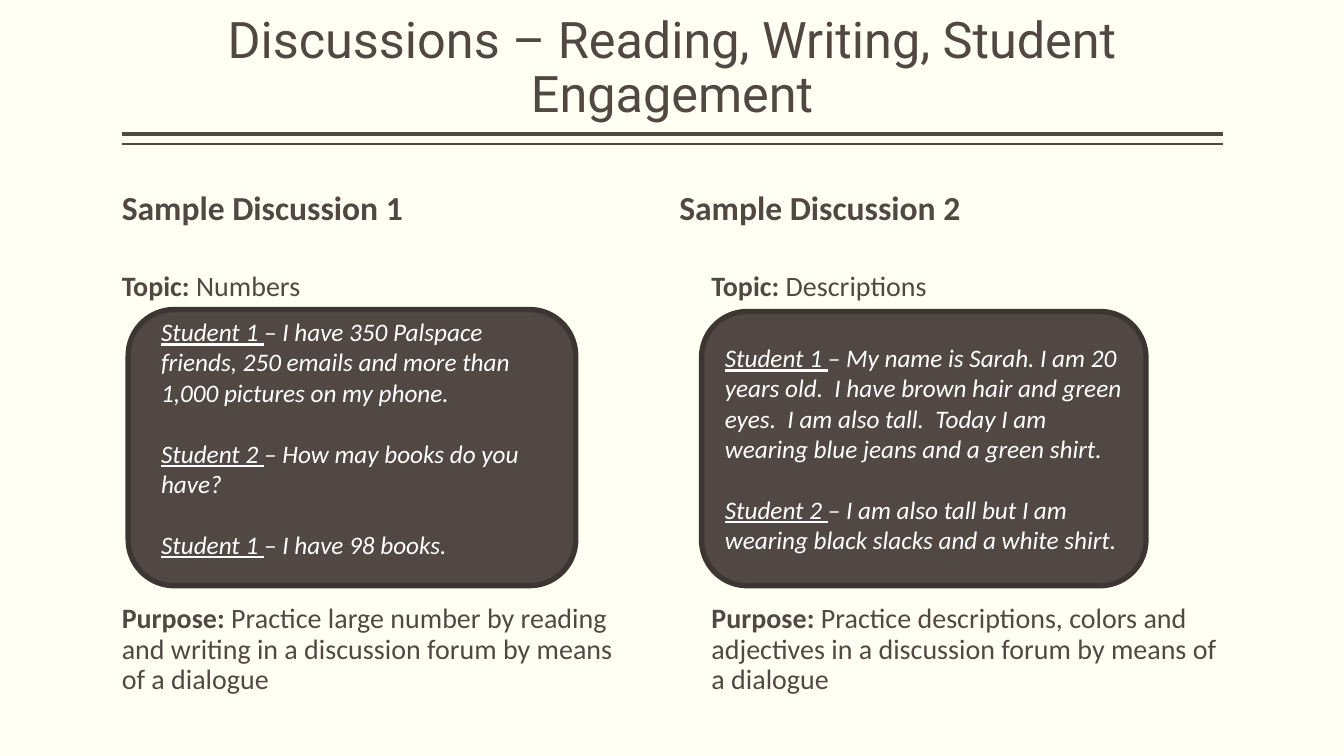
from lxml.etree import SubElement
from pptx import Presentation
from pptx.dml.color import RGBColor
from pptx.enum.shapes import MSO_CONNECTOR, MSO_SHAPE
from pptx.enum.text import MSO_ANCHOR, MSO_AUTO_SIZE, PP_ALIGN
from pptx.oxml.ns import qn
from pptx.util import Cm, Pt

COLORS = {"paper": "FFFFF3", "brown": "514843", "edge": "3C3532", "white": "FFFFFF"}

TITLE = "Discussions – Reading, Writing, Student Engagement"
# Boxes are (left, top, width, height) in centimetres.
TITLE_BOX = (3.07, 0.2, 27.74, 3.05)
RULES = [(3.38, 3), (3.63, 1)]  # height on the page in cm, weight in points
DISCUSSIONS = [
    {
        "heading": "Sample Discussion 1",
        "topic": " Numbers",
        "purpose": " Practice large number by reading and writing in a discussion forum"
                   " by means of a dialogue",
        "dialogue": [
            ("Student 1 ", "– I have 350 Palspace friends, 250 emails and more than"
                           " 1,000 pictures on my phone."),
            ("Student 2 ", "– How may books do you have?"),
            ("Student 1 ", "– I have 98 books."),
        ],
        "heading_box": (3.07, 4.45, 13.67, 1.42),
        "detail_box": (3.07, 6.73, 12.73, 11.2),
        "card_box": (3.23, 7.8, 11.28, 6.96),
        "speech_box": (3.81, 7.85, 10.06, 7.19),
    },
    {
        "heading": "Sample Discussion 2",
        "topic": " Descriptions",
        "purpose": " Practice descriptions, colors and adjectives in a discussion forum"
                   " by means of a dialogue",
        "dialogue": [
            ("Student 1 ", "– My name is Sarah. I am 20 years old.  I have brown hair and"
                           " green eyes.  I am also tall.  Today I am wearing blue jeans"
                           " and a green shirt."),
            ("Student 2 ", "– I am also tall but I am wearing black slacks and a white shirt."),
        ],
        "heading_box": (17.12, 4.45, 13.67, 1.42),
        "detail_box": (17.93, 6.73, 12.88, 11.2),
        "card_box": (17.68, 7.85, 11.2, 6.91),
        "speech_box": None,  # the dialogue sits in the card itself
    },
]

BODY = {"name": "Calibri", "size": Pt(20)}
HEADING = {"name": "Calibri", "size": Pt(24), "bold": True}
SPEECH = {"name": "Calibri", "size": Pt(18), "italic": True}
FRAME = {"word_wrap": True, "auto_size": MSO_AUTO_SIZE.NONE}
FLUSH = {**FRAME, "margin_left": 0, "margin_right": 0}
TIGHT = {"line_spacing": 0.9, "space_before": Pt(0)}
PURPOSE_GAP = Pt(216)  # leaves room for the card
SPEECH_GAP = Pt(22)  # one line of dialogue


def rgb(name):
    return RGBColor.from_string(COLORS[name])


def cm_box(box):
    return [Cm(length) for length in box]


def apply(target, values):
    for name, value in values.items():
        setattr(target, name, value)


def write(frame, paragraphs, color, frame_format):
    """Fill a frame from (paragraph format, [(text, font format), ...]) pairs."""
    apply(frame, frame_format)
    for index, (para_format, spans) in enumerate(paragraphs):
        para = frame.add_paragraph() if index else frame.paragraphs[0]
        apply(para, para_format)
        for text, font_format in spans:
            span = para.add_run()
            span.text = text
            apply(span.font, font_format)
            span.font.color.rgb = rgb(color)


def add_rule(page, top, weight):
    left, _, width, _ = TITLE_BOX
    rule = page.shapes.add_connector(
        MSO_CONNECTOR.STRAIGHT, *cm_box((left, top, left + width, top)))
    rule.line.color.rgb = rgb("brown")
    rule.line.width = Pt(weight)
    SubElement(rule._element.spPr, qn("a:effectLst"))


def add_card(page, box):
    card = page.shapes.add_shape(MSO_SHAPE.ROUNDED_RECTANGLE, *cm_box(box))
    card.shadow.inherit = False
    card.fill.solid()
    card.fill.fore_color.rgb = rgb("brown")
    card.line.color.rgb = rgb("edge")
    card.line.width = Pt(3.78)
    return card


def add_discussion(page, item):
    heading = page.shapes.add_textbox(*cm_box(item["heading_box"]))
    write(heading.text_frame, [(TIGHT, [(item["heading"], HEADING)])], "brown",
          {**FLUSH, "vertical_anchor": MSO_ANCHOR.BOTTOM})

    label = {**BODY, "bold": True}
    detail = page.shapes.add_textbox(*cm_box(item["detail_box"]))
    write(detail.text_frame, [
        (TIGHT, [("Topic:", label), (item["topic"], BODY)]),
        ({**TIGHT, "space_before": PURPOSE_GAP},
         [("Purpose:", label), (item["purpose"], BODY)]),
    ], "brown", FLUSH)

    holder = add_card(page, item["card_box"])
    anchor = MSO_ANCHOR.MIDDLE
    if item["speech_box"]:
        holder = page.shapes.add_textbox(*cm_box(item["speech_box"]))
        anchor = MSO_ANCHOR.TOP
    lines = [
        ({"alignment": PP_ALIGN.LEFT, "space_before": SPEECH_GAP if index else Pt(0)},
         [(speaker, {**SPEECH, "underline": True}), (words, SPEECH)])
        for index, (speaker, words) in enumerate(item["dialogue"])
    ]
    write(holder.text_frame, lines, "white", {**FRAME, "vertical_anchor": anchor})


def main():
    deck = Presentation()
    deck.slide_width, deck.slide_height = Cm(33.87), Cm(19.05)
    page = deck.slides.add_slide(deck.slide_layouts[5])
    page.background.fill.solid()
    page.background.fill.fore_color.rgb = rgb("paper")

    title = page.shapes.title
    apply(title, dict(zip(("left", "top", "width", "height"), cm_box(TITLE_BOX))))
    write(title.text_frame,
          [({**TIGHT, "alignment": PP_ALIGN.CENTER},
            [(TITLE, {"name": "Roboto", "size": Pt(36)})])],
          "brown", {**FLUSH, "vertical_anchor": MSO_ANCHOR.BOTTOM})

    for top, weight in RULES:
        add_rule(page, top, weight)
    for item in DISCUSSIONS:
        add_discussion(page, item)
    deck.save("out.pptx")


if __name__ == "__main__":
    main()
